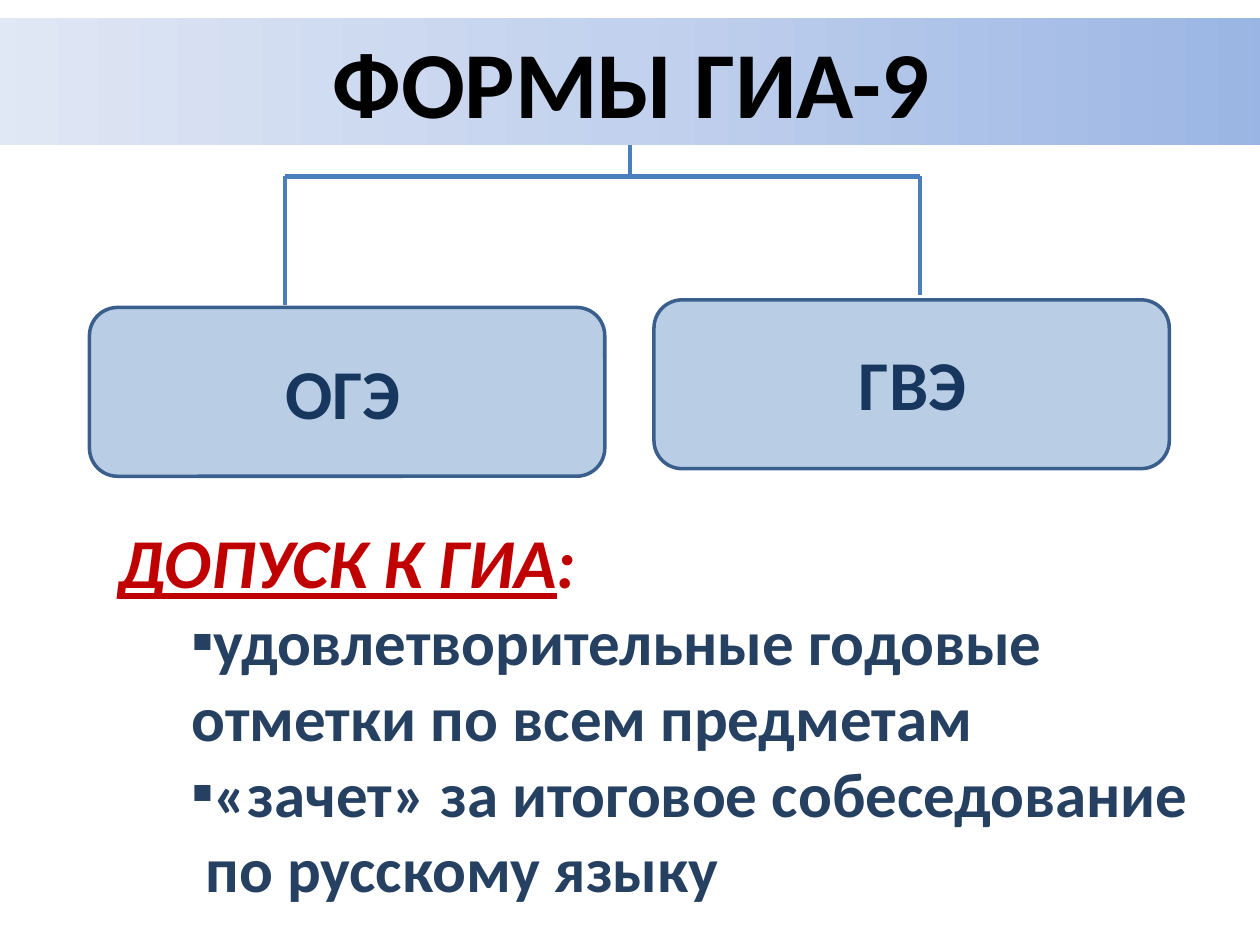
from copy import deepcopy

from lxml import etree
from pptx import Presentation
from pptx.dml.color import RGBColor
from pptx.enum import shapes, text
from pptx.oxml.ns import qn
from pptx.util import Inches, Pt

FONT = "Calibri"
BLACK = RGBColor(0x00, 0x00, 0x00)
RED = RGBColor(0xC0, 0x00, 0x00)
NAVY = RGBColor(0x17, 0x37, 0x5E)
SLATE = RGBColor(0x25, 0x40, 0x61)
BOX_FILL = RGBColor(0xB9, 0xCD, 0xE5)
BOX_LINE = RGBColor(0x3A, 0x5F, 0x8C)
BRANCH = RGBColor(0x4B, 0x7E, 0xBC)
BANNER_STOPS = (
    RGBColor(0x9A, 0xB5, 0xE4),
    RGBColor(0xC2, 0xD1, 0xED),
    RGBColor(0xE1, 0xE8, 0xF5),
)

ROUNDED = shapes.MSO_SHAPE.ROUNDED_RECTANGLE
BOX_WIDTH, BOX_HEIGHT = 4.09, 1.34
ADMISSION_LINES = (
    ("удовлетворительные годовые", True),
    ("отметки по всем предметам", False),
    ("«зачет» за итоговое собеседование", True),
    (" по русскому языку", False),
)


def add_plain_shape(slide, preset, left, top, width, height):
    shape = slide.shapes.add_shape(
        preset, Inches(left), Inches(top), Inches(width), Inches(height))
    shape.shadow.inherit = False
    shape.fill.background()
    shape.line.fill.background()
    return shape


def set_font(font, size, color, italic=None):
    font.name = FONT
    font.size = Pt(size)
    font.bold = True
    font.italic = italic
    font.color.rgb = color


def add_box(slide, left, top):
    box = add_plain_shape(slide, ROUNDED, left, top, BOX_WIDTH, BOX_HEIGHT)
    box.fill.solid()
    box.fill.fore_color.rgb = BOX_FILL
    box.line.color.rgb = BOX_LINE
    box.line.width = Pt(2)


def add_label(slide, wording, left, top, height):
    label = add_plain_shape(slide, ROUNDED, left, top, BOX_WIDTH, height)
    label.text_frame.vertical_anchor = text.MSO_ANCHOR.MIDDLE
    line = label.text_frame.paragraphs[0]
    line.text = wording
    line.alignment = text.PP_ALIGN.CENTER
    set_font(line.font, 40, NAVY)


def add_branch(slide, x1, y1, x2, y2, weight):
    branch = slide.shapes.add_connector(
        shapes.MSO_CONNECTOR.STRAIGHT,
        Inches(x1), Inches(y1), Inches(x2), Inches(y2))
    branch.line.color.rgb = BRANCH
    branch.line.width = Pt(weight)
    etree.SubElement(branch._element.spPr, qn("a:effectLst"))


def fill_banner(banner):
    """Three-stop gradient, darkest at the right."""
    banner.fill.gradient()
    banner.fill.gradient_angle = 180
    stop_list = next(banner._element.spPr.iter(qn("a:gsLst")))
    stop_list.append(deepcopy(stop_list[-1]))
    for index, (stop, color) in enumerate(
            zip(banner.fill.gradient_stops, BANNER_STOPS)):
        stop.position = index / 2
        stop.color.rgb = color


def add_banner(slide):
    banner = add_plain_shape(
        slide, shapes.MSO_SHAPE.RECTANGLE, -0.2, 0.14, 10.39, 1.01)
    fill_banner(banner)
    banner.text_frame.vertical_anchor = text.MSO_ANCHOR.TOP
    title = banner.text_frame.paragraphs[0]
    title.alignment = text.PP_ALIGN.CENTER
    for wording, size in ((" ФОРМЫ ГИА-9", 54), (" ", 44)):
        run = title.add_run()
        run.text = wording
        set_font(run.font, size, BLACK)


def indent_line(line, bulleted):
    properties = line._p.get_or_add_pPr()
    properties.set("marL", str(Inches(0.52)))
    properties.set("indent", str(Inches(0.06)))
    if bulleted:
        etree.SubElement(properties, qn("a:buFont"), typeface=FONT)
        etree.SubElement(properties, qn("a:buChar"), char="▪")
    else:
        etree.SubElement(properties, qn("a:buNone"))


def add_admission(slide):
    admission = slide.shapes.add_textbox(
        Inches(0.84), Inches(4.07), Inches(8.71), Inches(3.2))
    frame = admission.text_frame
    frame.word_wrap = False
    frame.auto_size = text.MSO_AUTO_SIZE.SHAPE_TO_FIT_TEXT
    frame.margin_right = Inches(0.02)

    heading = frame.paragraphs[0]
    set_font(heading.font, 40, RED, italic=True)
    for wording, underlined in (("ДОПУСК К ГИА", True), (":", False)):
        run = heading.add_run()
        run.text = wording
        run.font.underline = underlined

    for wording, bulleted in ADMISSION_LINES:
        line = frame.add_paragraph()
        line.text = wording
        set_font(line.font, 36, SLATE)
        # The bullet takes its size and colour from the first run.
        set_font(line.runs[0].font, 36, SLATE)
        properties = line._p.get_or_add_pPr()
        defaults = properties.find(qn("a:defRPr"))
        properties.remove(defaults)
        indent_line(line, bulleted)
        properties.append(defaults)


def main():
    presentation = Presentation()
    presentation.slide_width = Inches(10)
    presentation.slide_height = Inches(7.5)
    slide = presentation.slides.add_slide(presentation.slide_layouts[6])

    add_box(slide, 5.19, 2.38)
    add_branch(slide, 2.26, 1.4, 7.3, 1.4, 2.5)
    add_branch(slide, 2.26, 1.4, 2.26, 2.42, 2.5)
    add_branch(slide, 7.3, 1.4, 7.3, 2.34, 2.25)
    add_branch(slide, 5, 1.14, 5, 1.39, 2.25)
    add_box(slide, 0.71, 2.44)
    add_admission(slide)
    add_banner(slide)
    add_label(slide, "ОГЭ ", 0.74, 2.48, 1.26)
    add_label(slide, "ГВЭ ", 5.26, 2.37, BOX_HEIGHT)

    presentation.save("out.pptx")


if __name__ == "__main__":
    main()
